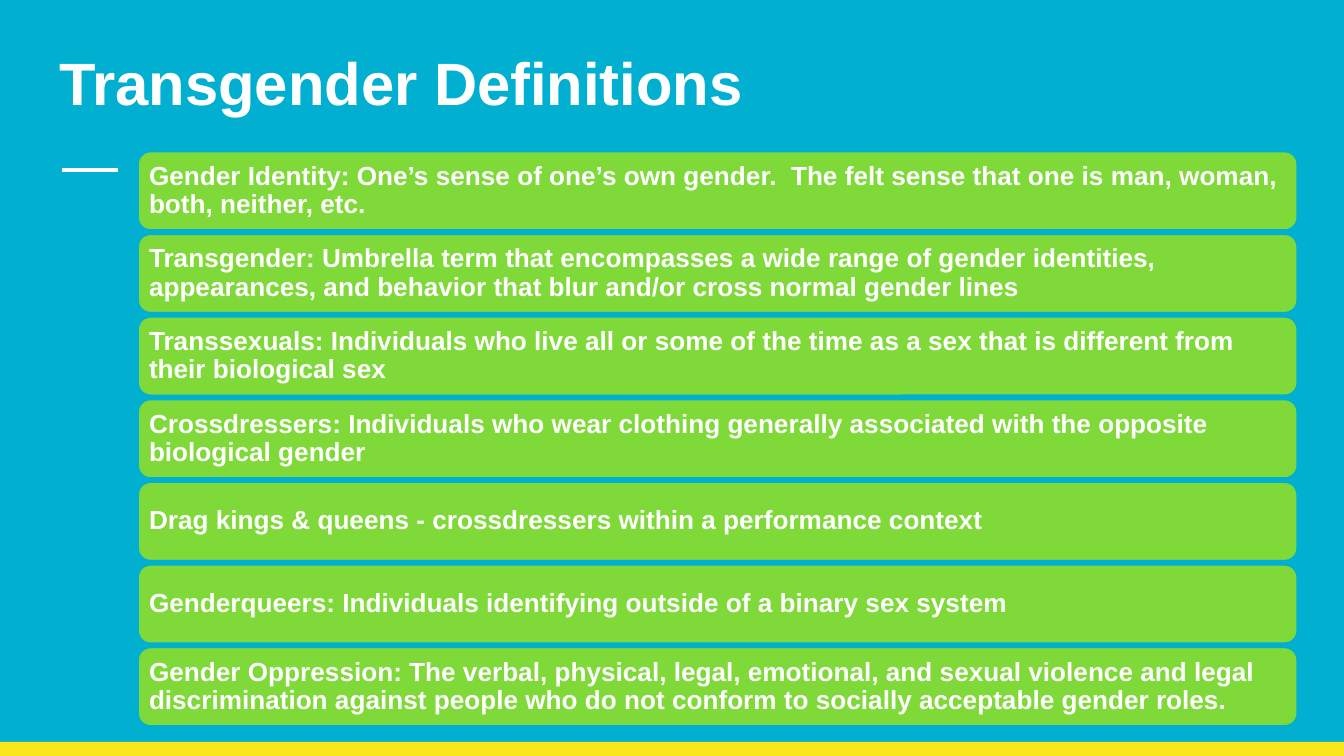
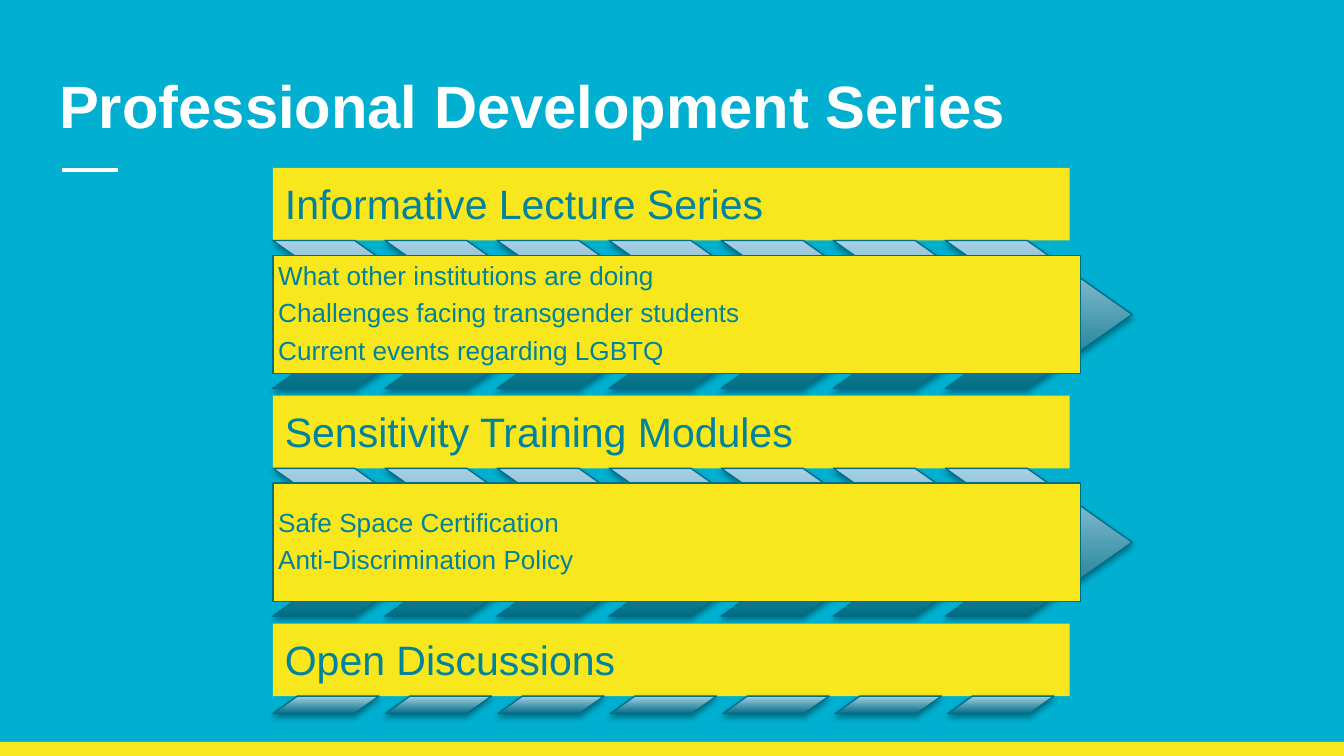
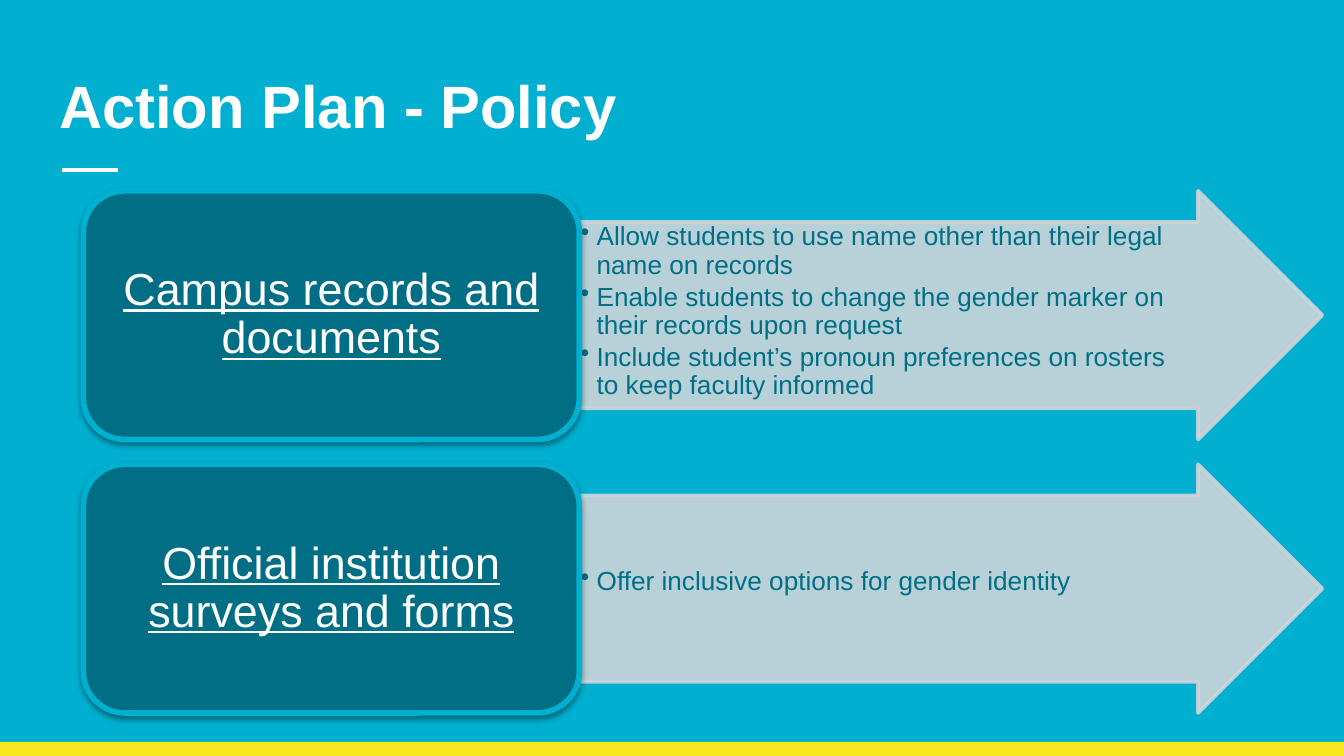
from dataclasses import dataclass

from pptx import Presentation
from pptx.dml.color import RGBColor
from pptx.enum.shapes import MSO_CONNECTOR, MSO_SHAPE
from pptx.enum.text import MSO_ANCHOR, MSO_AUTO_SIZE, PP_ALIGN
from pptx.oxml.ns import qn
from pptx.util import Emu, Inches, Pt
from lxml.etree import SubElement


@dataclass(frozen=True)
class Theme:
    font: str = "Arial"
    sky: str = "01AFD1"
    yellow: str = "F8E71C"
    white: str = "FFFFFF"
    green: str = "7FD938"
    teal: str = "01839D"
    deep: str = "006F85"
    pale: str = "A7D0E4"
    mist: str = "CCD5D9"
    title: int = 32
    label: int = 24
    heading: int = 22
    body: int = 14


T = Theme()
WIDTH, HEIGHT = Inches(10), Inches(5.625)
COLUMNS, ROWS = 100, 56.25
TITLE_BOX = (3.4, 4.1, 93.2, 7.1)

DEFINITIONS = [
    "Gender Identity: One’s sense of one’s own gender.  The felt sense that one is man, woman, both, neither, etc.",
    "Transgender: Umbrella term that encompasses a wide range of gender identities, appearances, and behavior that blur and/or cross normal gender lines",
    "Transsexuals: Individuals who live all or some of the time as a sex that is different from their biological sex",
    "Crossdressers: Individuals who wear clothing generally associated with the opposite biological gender",
    "Drag kings & queens - crossdressers within a performance context",
    "Genderqueers: Individuals identifying outside of a binary sex system",
    "Gender Oppression: The verbal, physical, legal, emotional, and sexual violence and legal discrimination against people who do not conform to socially acceptable gender roles.",
]
SERIES = [
    ("Informative Lecture Series", [
        "What other institutions are doing",
        "Challenges facing transgender students",
        "Current events regarding LGBTQ",
    ]),
    ("Sensitivity Training Modules", [
        "Safe Space Certification",
        "Anti-Discrimination Policy",
    ]),
    ("Open Discussions", []),
]
POLICIES = [
    ("Campus records and documents", [
        "Allow students to use name other than their legal name on records",
        "Enable students to change the gender marker on their records upon request",
        "Include student’s pronoun preferences on rosters to keep faculty informed",
    ], 0.1),
    ("Official institution surveys and forms", [
        "Offer inclusive options for gender identity",
    ], 5.4),
]


def col(n):
    return Emu(round(WIDTH * n / COLUMNS))


def row(n):
    return Emu(round(HEIGHT * n / ROWS))


def box(left, top, width, height):
    return col(left), row(top), col(width), row(height)


def rgb(color):
    return RGBColor.from_string(color)


def add_block(slide, kind, place, fill, line=None, weight=0.75, adj=()):
    sp = slide.shapes.add_shape(kind, *box(*place))
    sp.shadow.inherit = False
    for i, value in enumerate(adj):
        sp.adjustments[i] = value
    if isinstance(fill, tuple):
        sp.fill.gradient()
        sp.fill.gradient_angle = 90
        for stop, color in zip(sp.fill.gradient_stops, fill):
            stop.color.rgb = rgb(color)
    else:
        sp.fill.solid()
        sp.fill.fore_color.rgb = rgb(fill)
    if line:
        sp.line.color.rgb = rgb(line)
        sp.line.width = Pt(weight)
    else:
        sp.line.fill.background()
    return sp


def add_shadow(sp, opacity, distance):
    effects = sp.element.spPr.find(qn("a:effectLst"))
    shadow = SubElement(effects, qn("a:outerShdw"), blurRad=str(Pt(3.1)),
                        dist=str(Pt(distance)), dir="5400000", rotWithShape="0")
    color = SubElement(shadow, qn("a:srgbClr"), val="000000")
    SubElement(color, qn("a:alpha"), val=str(opacity * 1000))


def set_opacity(sp, opacity):
    for color in sp.element.spPr.iter(qn("a:srgbClr")):
        SubElement(color, qn("a:alpha"), val=str(opacity * 1000))


def add_run(p, text, size, color, bold=False, underline=False):
    r = p.add_run()
    r.text = text
    r.font.name = T.font
    r.font.size = Pt(size)
    r.font.color.rgb = rgb(color)
    r.font.bold = bold
    r.font.underline = underline


def add_bullet(p):
    pPr = p._p.get_or_add_pPr()
    pPr.set("marL", str(Inches(0.12)))
    pPr.set("indent", str(-Inches(0.12)))
    SubElement(pPr, qn("a:buChar"), char="•")


def write(sp, lines, size, color, inset, anchor=MSO_ANCHOR.MIDDLE,
          align=PP_ALIGN.LEFT, after=0.35, bullets=False, **style):
    tf = sp.text_frame
    tf.word_wrap = True
    tf.vertical_anchor = anchor
    tf.margin_left = tf.margin_right = col(inset)
    tf.margin_top = tf.margin_bottom = row(inset)
    for i, text in enumerate(lines):
        p = tf.add_paragraph() if i else tf.paragraphs[0]
        p.alignment = align
        p.line_spacing = 0.9
        p.space_after = Pt(size * after)
        if bullets:
            add_bullet(p)
        add_run(p, text, size, color, **style)
    return tf


def add_titled_slide(prs, layout, title, place=None):
    slide = prs.slides.add_slide(layout)
    sp = slide.shapes.title
    if place:
        sp.left, sp.top, sp.width, sp.height = box(*place)
    tf = sp.text_frame
    tf.auto_size = MSO_AUTO_SIZE.NONE
    tf.word_wrap = True
    tf.vertical_anchor = MSO_ANCHOR.TOP
    tf.margin_left = tf.margin_right = col(1)
    tf.margin_top = tf.margin_bottom = row(1)
    p = tf.paragraphs[0]
    p.alignment = PP_ALIGN.LEFT
    add_run(p, title, T.title, T.white, bold=True)
    return slide


def style_layout(layout, slide):
    layout.background.fill.solid()
    layout.background.fill.fore_color.rgb = rgb(T.sky)
    title = layout.placeholders[0]
    title.left, title.top, title.width, title.height = box(*TITLE_BOX)
    band = add_block(slide, MSO_SHAPE.RECTANGLE, (0, 55.2, COLUMNS, 1.05), T.yellow)
    rule = slide.shapes.add_connector(
        MSO_CONNECTOR.STRAIGHT, col(4.6), row(12.65), col(8.8), row(12.65))
    rule.line.color.rgb = rgb(T.white)
    rule.line.width = Pt(2.25)
    SubElement(rule.element.spPr, qn("a:effectLst"))
    for shape in (band, rule):
        layout.shapes.element.append(shape.element)


def add_definitions(slide):
    for i, text in enumerate(DEFINITIONS):
        sp = add_block(slide, MSO_SHAPE.ROUNDED_RECTANGLE,
                       (10.2, 11.2 + 6.15 * i, 86.4, 6), T.green, T.sky, 2)
        write(sp, [text], T.body, T.white, 0.6, bold=True)


def add_ribbon(slide, kind, top, width, height, step, adj):
    for i in range(7):
        sp = add_block(slide, kind, (20.3 + step * i, top, width, height),
                       (T.deep, T.pale), T.deep, adj=[adj])
        add_shadow(sp, 35, 1.8)


def add_series(slide):
    for i, (heading, topics) in enumerate(SERIES):
        top = 12.5 + 16.95 * i
        sp = add_block(slide, MSO_SHAPE.RECTANGLE, (20.3, top, 59.3, 5.4), T.yellow)
        write(sp, [heading], T.heading, T.teal, 0.9, MSO_ANCHOR.BOTTOM)
        if topics:
            add_ribbon(slide, MSO_SHAPE.CHEVRON, top + 5.4, 13.9, 11, 8.34, 0.71)
            sp = add_block(slide, MSO_SHAPE.RECTANGLE,
                           (20.3, top + 6.5, 60.1, 8.8), T.yellow, T.deep)
            write(sp, topics, T.body, T.teal, 0.4)
        else:
            add_ribbon(slide, MSO_SHAPE.PARALLELOGRAM, top + 5.4, 7.9, 1.3, 8.37, 1.41)


def add_policies(slide):
    for i, (label, actions, lead) in enumerate(POLICIES):
        top = 14.2 + 20.35 * i
        arrow = add_block(slide, MSO_SHAPE.RIGHT_ARROW, (43.1, top, 55.3, 18.5),
                          T.mist, T.mist, 2, (0.75, 0.5))
        set_opacity(arrow, 90)
        tf = write(arrow, actions, T.body, T.deep, 0.1, MSO_ANCHOR.TOP,
                   after=0.15, bullets=True)
        tf.margin_top = row(lead)
        tf.margin_right = col(4.6)
        sp = add_block(slide, MSO_SHAPE.ROUNDED_RECTANGLE,
                       (6.2, top, 36.9, 18.5), T.deep, T.sky, 3)
        add_shadow(sp, 38, 1.6)
        write(sp, [label], T.label, T.white, 1, align=PP_ALIGN.CENTER, underline=True)


def main():
    prs = Presentation()
    prs.slide_width, prs.slide_height = WIDTH, HEIGHT
    layout = prs.slide_layouts.get_by_name("Title Only")
    slide = add_titled_slide(prs, layout, "Transgender Definitions", (3.4, 2.4, 93.2, 8.5))
    style_layout(layout, slide)
    add_definitions(slide)
    add_series(add_titled_slide(prs, layout, "Professional Development Series"))
    add_policies(add_titled_slide(prs, layout, "Action Plan - Policy"))
    prs.save("out.pptx")


if __name__ == "__main__":
    main()
